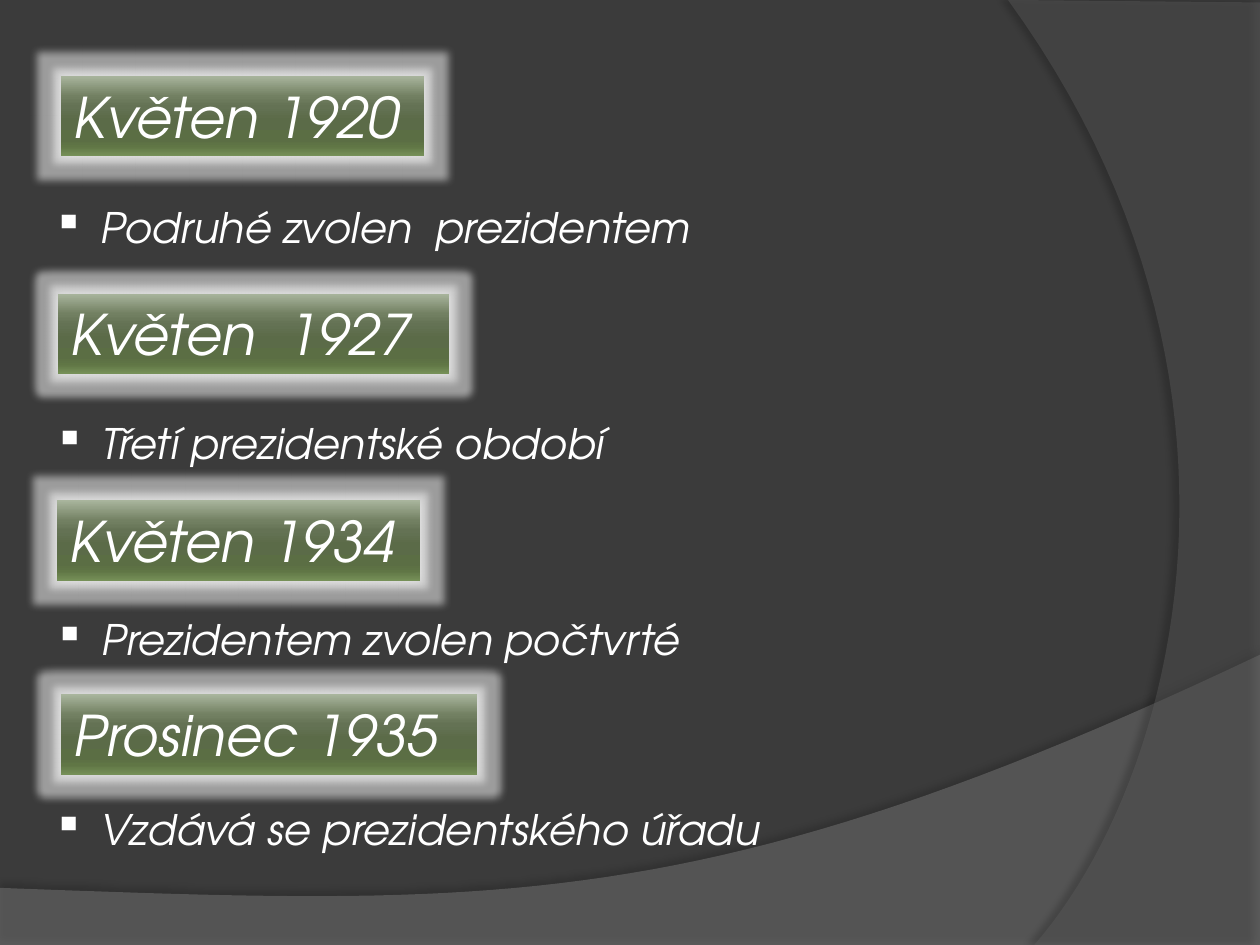
from dataclasses import dataclass

from lxml import etree
from pptx import Presentation
from pptx.dml.color import RGBColor
from pptx.enum.shapes import MSO_SHAPE as Shape
from pptx.enum.text import MSO_ANCHOR as Anchor, MSO_AUTO_SIZE as AutoSize, PP_ALIGN as Align
from pptx.oxml import parse_xml
from pptx.util import Cm, Pt

NS = "http://schemas.openxmlformats.org/drawingml/2006/main"


@dataclass(frozen=True)
class Theme:
    font: str = "TeX Gyre Adventor"
    background: str = "3B3B3B"
    text: str = "FFFFFF"
    glow: str = "FFFFFF"
    shadow: str = "000000"
    lower_wave: str = "7F7F7F"
    right_wave: str = "5E5E5E"
    date_stops: tuple = ((0, "A9B59D"), (25, "728062"), (38, "647254"), (55, "5B6B48"),
                         (80, "5B6E44"), (88, "607645"), (100, "769058"))
    date_size: int = 32
    event_size: int = 24


theme = Theme()


def drawing(body):
    """Parse one DrawingML element, given without its prefix declaration."""
    return parse_xml(body.replace(" ", f' xmlns:a="{NS}" ', 1))


def write(shape, text, size=theme.event_size, color=theme.text, italic=True, bullet=None):
    frame = shape.text_frame
    frame.word_wrap = False
    frame.auto_size = AutoSize.SHAPE_TO_FIT_TEXT
    frame.vertical_anchor = Anchor.TOP
    paragraph = frame.paragraphs[0]
    paragraph.alignment = Align.LEFT
    run = paragraph.add_run()
    run.text = text
    run.font.name = theme.font
    run.font.size = Pt(size)
    run.font.italic = italic
    run.font.color.rgb = RGBColor.from_string(color)
    if bullet:
        properties = paragraph._p.get_or_add_pPr()
        properties.set("marL", str(Cm(0.95)))
        properties.set("indent", str(Cm(-0.95)))
        properties.append(drawing(f'<a:buChar char="{bullet}"/>'))


deck = Presentation()
deck.slide_width, deck.slide_height = Cm(25.4), Cm(19.05)
slide = deck.slides.add_slide(deck.slide_layouts[6])
slide.background.fill.solid()
slide.background.fill.fore_color.rgb = RGBColor.from_string(theme.background)

# Background waves: a Bezier edge closed by corner points, all in cm
waves = [
    (((25.4, 13.2), (14.2, 18.52), (9.93, 18.26), (0, 17.9)),
     [(0, 19.07), (25.4, 19.07)], theme.lower_wave, 45, 35, 3.5, 270),
    (((20.85, 19.05), (23.75, 15.72), (25.86, 7.62), (20.32, 0)),
     [(25.4, 0.05), (25.4, 19.05)], theme.right_wave, 40, 45, 4, 180),
]
steps = 48
for edge, corners, color, opacity, shade, distance, direction in waves:
    curve = []
    for step in range(steps + 1):
        t = step / steps
        weights = ((1 - t) ** 3, 3 * t * (1 - t) ** 2, 3 * t * t * (1 - t), t ** 3)
        curve.append(tuple(sum(w * p[axis] for w, p in zip(weights, edge)) for axis in (0, 1)))
    outline = [(Cm(x), Cm(y)) for x, y in curve + corners]
    builder = slide.shapes.build_freeform(*outline[0])
    builder.add_line_segments(outline[1:], close=True)
    wave = builder.convert_to_shape()
    wave.line.fill.background()
    wave.fill.solid()
    wave.fill.fore_color.rgb = RGBColor.from_string(color)
    fill_color = wave._element.spPr.find(f".//{{{NS}}}solidFill/{{{NS}}}srgbClr")
    etree.SubElement(fill_color, f"{{{NS}}}alpha", val=str(opacity * 1000))
    wave._element.spPr.append(drawing(
        f'<a:effectLst ><a:outerShdw blurRad="{Pt(4)}" dist="{Pt(distance)}" '
        f'dir="{direction * 60000}" algn="ctr" rotWithShape="0"><a:srgbClr val="{theme.shadow}">'
        f'<a:alpha val="{shade * 1000}"/></a:srgbClr></a:outerShdw></a:effectLst>'))

# Dates with the event below: text, left, top, width
milestones = [
    (("Květen 1920", 1.23, 1.53, 7.32), ("Podruhé zvolen  prezidentem", 0.82, 3.94, 13.67)),
    (("Květen  1927", 1.17, 5.92, 7.88), ("Třetí prezidentské období", 0.84, 8.29, 12.01)),
    (("Květen 1934", 1.15, 10.09, 7.32), ("Prezidentem zvolen počtvrté", 0.84, 12.25, 13.23)),
    (("Prosinec 1935", 1.23, 14, 8.39), ("Vzdává se prezidentského úřadu", 0.82, 16.08, 15.37)),
]
stops = "".join(f'<a:gs pos="{position * 1000}"><a:srgbClr val="{color}"/></a:gs>'
                for position, color in theme.date_stops)
for (date, left, top, width), (event, event_left, event_top, event_width) in milestones:
    date_box = slide.shapes.add_shape(Shape.RECTANGLE, Cm(left), Cm(top), Cm(width), Cm(1.62))
    date_box.line.fill.background()
    properties = date_box._element.spPr
    properties.insert(2, drawing(
        f'<a:gradFill rotWithShape="1"><a:gsLst>{stops}</a:gsLst>'
        '<a:lin ang="5400000" scaled="0"/></a:gradFill>'))
    properties.append(drawing(
        f'<a:effectLst ><a:glow rad="{Pt(9)}"><a:srgbClr val="{theme.glow}">'
        f'<a:alpha val="50000"/></a:srgbClr></a:glow><a:outerShdw blurRad="{Pt(5)}" dist="0" '
        f'dir="0" algn="ctr" rotWithShape="0"><a:srgbClr val="{theme.glow}">'
        '<a:alpha val="50000"/></a:srgbClr></a:outerShdw></a:effectLst>'))
    write(date_box, date, size=theme.date_size)

    event_box = slide.shapes.add_textbox(Cm(event_left), Cm(event_top), Cm(event_width), Cm(1.28))
    write(event_box, event, bullet="▪")

deck.save("out.pptx")
